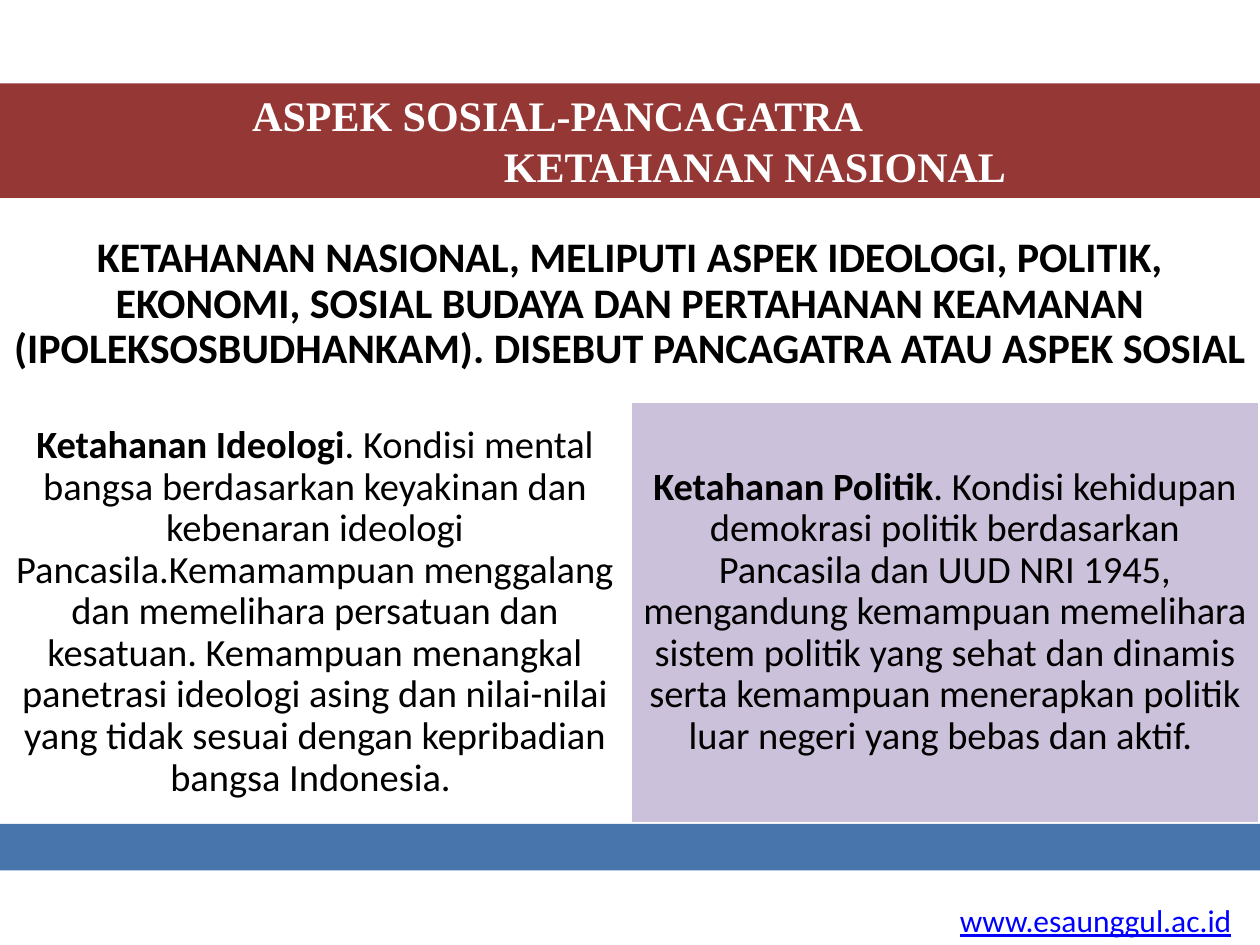
from dataclasses import dataclass

from pptx import Presentation
from pptx.dml.color import RGBColor
from pptx.enum.shapes import MSO_SHAPE
from pptx.enum.text import MSO_ANCHOR, MSO_AUTO_SIZE, PP_ALIGN
from pptx.util import Cm, Pt


@dataclass(frozen=True)
class Theme:
    body_font: str = "Calibri"
    title_font: str = "Times New Roman"
    title_size: int = 24
    intro_size: int = 24
    panel_size: int = 22
    link_size: int = 18
    white: str = "FFFFFF"
    black: str = "000000"
    maroon: str = "953735"
    lilac: str = "CCC1DA"
    blue: str = "4875AC"
    link: str = "0000FF"


THEME = Theme()
PAGE_WIDTH, PAGE_HEIGHT = 25.4, 19.05
PANEL_TOP, PANEL_HEIGHT = 8.08, 8.53

HEADING = [("ASPEK SOSIAL-PANCAGATRA", 4.83), (" KETAHANAN NASIONAL", None)]
INTRO = (
    "KETAHANAN NASIONAL, MELIPUTI ASPEK IDEOLOGI, POLITIK, EKONOMI, SOSIAL "
    "BUDAYA DAN PERTAHANAN KEAMANAN (IPOLEKSOSBUDHANKAM). DISEBUT PANCAGATRA "
    "ATAU ASPEK SOSIAL"
)
PANELS = [
    (
        "Ketahanan Ideologi",
        ". Kondisi mental bangsa berdasarkan keyakinan dan kebenaran ideologi "
        "Pancasila.Kemamampuan menggalang dan memelihara persatuan dan kesatuan. "
        "Kemampuan menangkal panetrasi ideologi asing dan nilai-nilai yang tidak "
        "sesuai dengan kepribadian bangsa Indonesia. ",
        THEME.white,
    ),
    (
        "Ketahanan Politik",
        ". Kondisi kehidupan demokrasi politik berdasarkan Pancasila dan UUD NRI "
        "1945, mengandung kemampuan memelihara sistem politik yang sehat dan "
        "dinamis serta kemampuan menerapkan politik luar negeri yang bebas dan "
        "aktif. ",
        THEME.lilac,
    ),
]


def lengths(box):
    return [Cm(value) for value in box]


def paint(part, color):
    part.fill.solid()
    part.fill.fore_color.rgb = RGBColor.from_string(color)


def add_run(paragraph, text, size, color=THEME.black, bold=False, font=THEME.body_font):
    run = paragraph.add_run()
    run.text = text
    run.font.name = font
    run.font.size = Pt(size)
    run.font.bold = bold
    run.font.color.rgb = RGBColor.from_string(color)
    return run


def add_rectangle(slide, box, color):
    rectangle = slide.shapes.add_shape(MSO_SHAPE.RECTANGLE, *lengths(box))
    rectangle.shadow.inherit = False
    paint(rectangle, color)
    rectangle.line.fill.background()
    return rectangle


def set_frame(frame, inset):
    frame.word_wrap = True
    frame.vertical_anchor = MSO_ANCHOR.MIDDLE
    frame.margin_left = frame.margin_right = Cm(inset)
    frame.margin_top = frame.margin_bottom = Cm(inset)
    paragraph = frame.paragraphs[0]
    paragraph.alignment = PP_ALIGN.CENTER
    paragraph.line_spacing = 0.9
    return paragraph


def fill_heading(slide, box):
    heading = slide.shapes.title
    heading.left, heading.top, heading.width, heading.height = lengths(box)
    paint(heading, THEME.maroon)
    frame = heading.text_frame
    frame.auto_size = MSO_AUTO_SIZE.NONE
    frame.vertical_anchor = MSO_ANCHOR.TOP
    for index, (text, indent) in enumerate(HEADING):
        paragraph = frame.add_paragraph() if index else frame.paragraphs[0]
        paragraph.alignment = PP_ALIGN.CENTER
        if indent:
            paragraph.alignment = PP_ALIGN.LEFT
            properties = paragraph._p.get_or_add_pPr()
            properties.set("marL", str(Cm(indent)))
            properties.set("indent", "0")
        add_run(paragraph, text, THEME.title_size, THEME.white, True, THEME.title_font)


def add_intro(slide, box):
    intro = slide.shapes.add_textbox(*lengths(box))
    paragraph = set_frame(intro.text_frame, 0.25)
    add_run(paragraph, INTRO, THEME.intro_size, bold=True)


def add_panels(slide, box):
    left, top, width, height = box
    panel_width = width / len(PANELS)
    for index, (term, definition, color) in enumerate(PANELS):
        place = (left + index * panel_width, top, panel_width, height)
        panel = add_rectangle(slide, place, color)
        panel.line.color.rgb = RGBColor.from_string(THEME.white)
        panel.line.width = Pt(2)
        paragraph = set_frame(panel.text_frame, 0.23)
        add_run(paragraph, term, THEME.panel_size, bold=True)
        add_run(paragraph, definition, THEME.panel_size)


def add_address(slide, box):
    address = slide.shapes.add_textbox(*lengths(box))
    address.text_frame.word_wrap = False
    paragraph = address.text_frame.paragraphs[0]
    run = add_run(paragraph, "www.esaunggul.ac.id", THEME.link_size, THEME.link)
    run.font.underline = True


def main():
    deck = Presentation()
    deck.slide_width, deck.slide_height = Cm(PAGE_WIDTH), Cm(PAGE_HEIGHT)
    slide = deck.slides.add_slide(deck.slide_layouts.get_by_name("Title Only"))
    add_address(slide, (19.1, 18.03, 6.05, 1.02))
    add_intro(slide, (0, 4.11, PAGE_WIDTH, 4.06))
    add_panels(slide, (0, PANEL_TOP, PAGE_WIDTH, PANEL_HEIGHT))
    add_rectangle(slide, (0, PANEL_TOP + PANEL_HEIGHT, PAGE_WIDTH, 0.94), THEME.blue)
    fill_heading(slide, (0, 1.68, PAGE_WIDTH, 2.31))
    deck.save("out.pptx")


if __name__ == "__main__":
    main()
